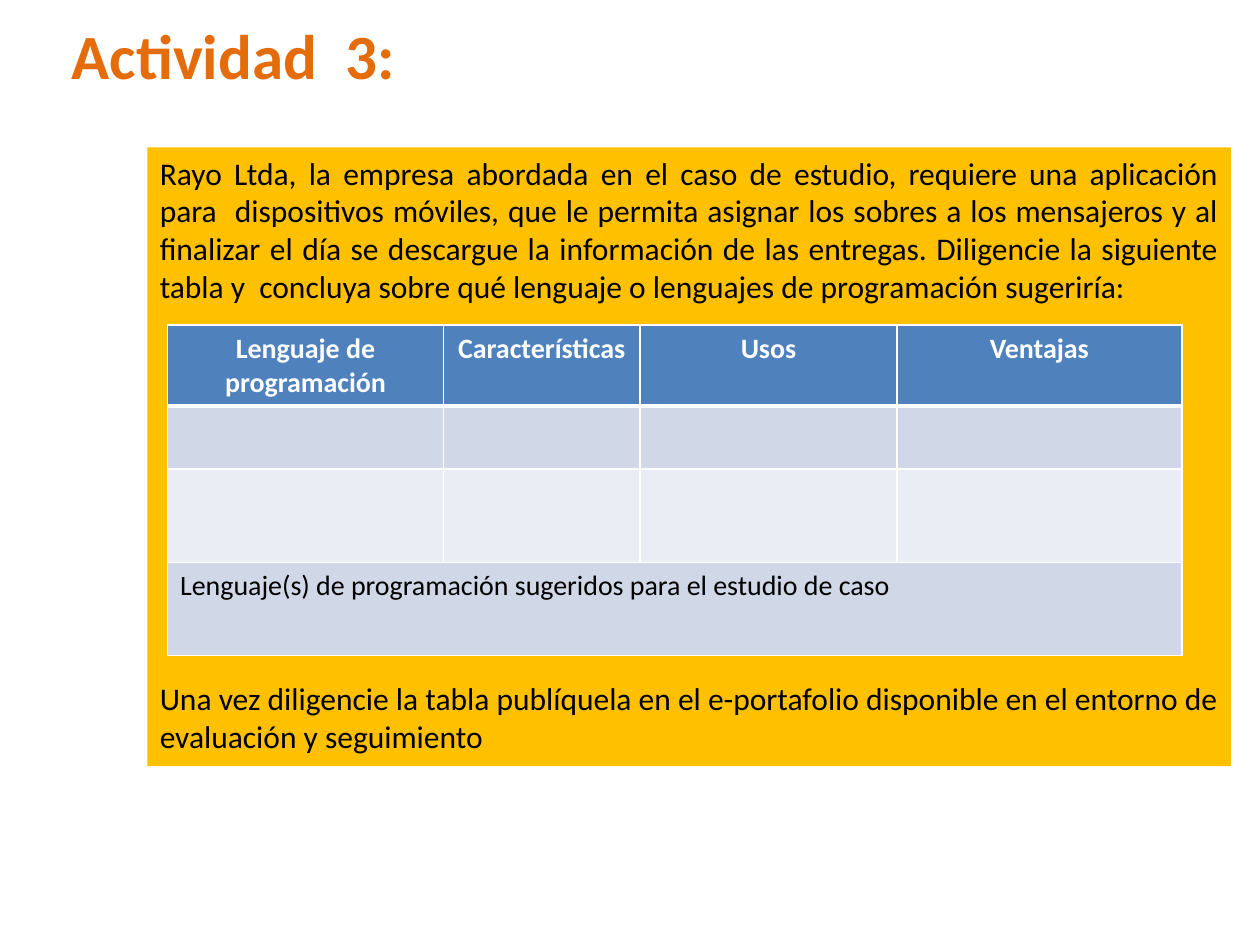
import pptx
import pptx.dml.color
import pptx.enum.shapes
import pptx.enum.text
import pptx.oxml.ns
import pptx.util
from lxml import etree
from pptx.util import Inches

COLORS = {
    "title": "E46C0A",
    "panel": "FFC000",
    "header": "4F81BD",
    "dark_band": "D0D8E8",
    "light_band": "E9EDF4",
    "white": "FFFFFF",
    "black": "000000",
}
FONT = "Calibri"
ALIGN = pptx.enum.text.PP_ALIGN
INTRO = (
    "Rayo Ltda, la empresa abordada en el caso de estudio, requiere una aplicación "
    "para  dispositivos móviles, que le permita asignar los sobres a los mensajeros y al "
    "finalizar el día se descargue la información de las entregas. Diligencie la siguiente "
    "tabla y  concluya sobre qué lenguaje o lenguajes de programación sugeriría:"
)
CLOSING = (
    "Una vez diligencie la tabla publíquela en el e-portafolio disponible en el entorno de "
    "evaluación y seguimiento"
)
HEADERS = ["Lenguaje de programación", "Características", "Usos", "Ventajas"]
CONCLUSION = "Lenguaje(s) de programación sugeridos para el estudio de caso"
COLUMN_WIDTHS = [2.19, 1.56, 2.04, 2.26]
ROW_HEIGHTS = [0.59, 0.5, 0.74, 0.74]
ROW_FILLS = ["header", "dark_band", "light_band", "dark_band"]


def color(name):
    return pptx.dml.color.RGBColor.from_string(COLORS[name])


def write(para, text, size, ink="black", bold=False, align=ALIGN.LEFT, before=0):
    para.alignment = align
    if before:
        para.space_before = pptx.util.Pt(before)
    span = para.add_run()
    span.text = text
    span.font.name = FONT
    span.font.size = pptx.util.Pt(size)
    span.font.bold = bold
    span.font.color.rgb = color(ink)


def add_title(page, text):
    title = page.shapes.title
    title.left, title.top = Inches(0.47), Inches(0.08)
    title.width, title.height = Inches(6.81), Inches(1.89)
    frame = title.text_frame
    frame.word_wrap = True
    frame.auto_size = pptx.enum.text.MSO_AUTO_SIZE.NONE
    frame.vertical_anchor = pptx.enum.text.MSO_ANCHOR.TOP
    write(frame.paragraphs[0], text, 36, ink="title", bold=True)


def add_panel(page):
    panel = page.shapes.add_shape(
        pptx.enum.shapes.MSO_SHAPE.RECTANGLE,
        Inches(1.17), Inches(1.17), Inches(8.6), Inches(4.91),
    )
    panel.shadow.inherit = False
    panel.fill.solid()
    panel.fill.fore_color.rgb = color("panel")
    panel.line.fill.background()
    frame = panel.text_frame
    frame.word_wrap = True
    frame.vertical_anchor = pptx.enum.text.MSO_ANCHOR.TOP
    write(frame.paragraphs[0], INTRO, 18, align=ALIGN.JUSTIFY)
    write(frame.add_paragraph(), CLOSING, 18, align=ALIGN.JUSTIFY, before=214)


def set_borders(cell, bottom):
    properties = cell._tc.get_or_add_tcPr()
    widths = {"lnL": 1, "lnR": 1, "lnT": 1, "lnB": bottom}
    for index, (side, width) in enumerate(widths.items()):
        line = etree.Element(pptx.oxml.ns.qn(f"a:{side}"), w=str(pptx.util.Pt(width)))
        fill = etree.SubElement(line, pptx.oxml.ns.qn("a:solidFill"))
        etree.SubElement(fill, pptx.oxml.ns.qn("a:srgbClr"), val=COLORS["white"])
        properties.insert(index, line)


def add_language_table(page):
    table = page.shapes.add_table(
        len(ROW_HEIGHTS), len(COLUMN_WIDTHS),
        Inches(1.33), Inches(2.58),
        Inches(sum(COLUMN_WIDTHS)), Inches(sum(ROW_HEIGHTS)),
    ).table
    for column, width in zip(table.columns, COLUMN_WIDTHS):
        column.width = Inches(width)
    for index, (row, height, fill) in enumerate(zip(table.rows, ROW_HEIGHTS, ROW_FILLS)):
        row.height = Inches(height)
        for cell in row.cells:
            cell.fill.solid()
            cell.fill.fore_color.rgb = color(fill)
            set_borders(cell, bottom=3 if index == 0 else 1)
    for cell, text in zip(table.rows[0].cells, HEADERS):
        write(cell.text_frame.paragraphs[0], text, 16, ink="white", bold=True, align=ALIGN.CENTER)
    last = len(ROW_HEIGHTS) - 1
    conclusion = table.cell(last, 0)
    conclusion.merge(table.cell(last, len(COLUMN_WIDTHS) - 1))
    write(conclusion.text_frame.paragraphs[0], CONCLUSION, 16)


def main():
    deck = pptx.Presentation()
    deck.slide_width, deck.slide_height = Inches(10), Inches(7.5)
    page = deck.slides.add_slide(deck.slide_layouts[5])
    add_title(page, "Actividad  3:")
    add_panel(page)
    add_language_table(page)
    deck.save("out.pptx")


if __name__ == "__main__":
    main()
